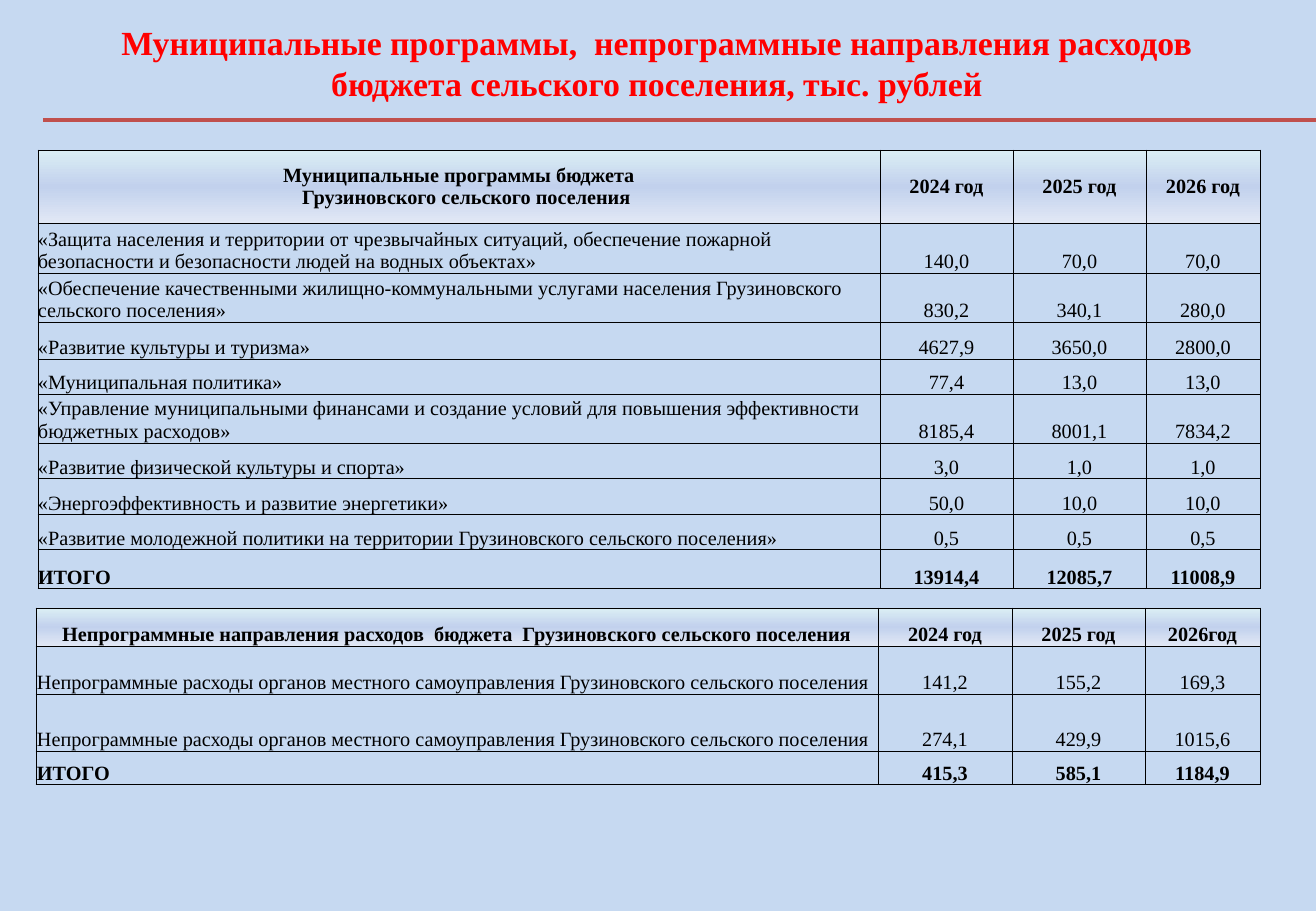
from lxml import etree
from pptx import Presentation
from pptx.dml.color import RGBColor
from pptx.enum.shapes import MSO_CONNECTOR
from pptx.enum.text import MSO_ANCHOR, MSO_AUTO_SIZE, PP_ALIGN
from pptx.oxml.ns import qn
from pptx.util import Pt

TITLE = ("Муниципальные программы,  непрограммные направления расходов "
         "бюджета сельского поселения, тыс. рублей")
ORGANS = ("Непрограммные расходы органов местного самоуправления "
          "Грузиновского сельского поселения")

PROGRAMS = [
    ("Муниципальные программы бюджета\nГрузиновского сельского поселения",
     "2024 год", "2025 год", "2026 год"),
    ("«Защита населения и территории от чрезвычайных ситуаций, обеспечение пожарной "
     "безопасности и безопасности людей на водных объектах»", "140,0", "70,0", "70,0"),
    ("«Обеспечение качественными жилищно-коммунальными услугами населения "
     "Грузиновского сельского поселения»", "830,2", "340,1", "280,0"),
    ("«Развитие культуры и туризма»", "4627,9", "3650,0", "2800,0"),
    ("«Муниципальная политика»", "77,4", "13,0", "13,0"),
    ("«Управление муниципальными финансами и создание условий для повышения "
     "эффективности бюджетных расходов»", "8185,4", "8001,1", "7834,2"),
    ("«Развитие физической культуры и спорта»", "3,0", "1,0", "1,0"),
    ("«Энергоэффективность и развитие энергетики»", "50,0", "10,0", "10,0"),
    ("«Развитие молодежной политики на территории Грузиновского сельского поселения»",
     "0,5", "0,5", "0,5"),
    ("ИТОГО", "13914,4", "12085,7", "11008,9"),
]
OTHER = [
    ("Непрограммные направления расходов  бюджета  Грузиновского сельского поселения",
     "2024 год", "2025 год", "2026год"),
    (ORGANS, "141,2", "155,2", "169,3"),
    (ORGANS, "274,1", "429,9", "1015,6"),
    ("ИТОГО", "415,3", "585,1", "1184,9"),
]

CENTER, LEFT = PP_ALIGN.CENTER, PP_ALIGN.LEFT
TOP, MIDDLE, BOTTOM = MSO_ANCHOR.TOP, MSO_ANCHOR.MIDDLE, MSO_ANCHOR.BOTTOM

# rows, left, top, column widths, row heights, cell inset, header anchor
TABLES = [
    (PROGRAMS, 38, 150, (842, 133, 133, 114),
     (73, 50, 49, 37, 35, 49, 36, 36, 35, 39), 0, MIDDLE),
    (OTHER, 36, 608, (842, 134, 133, 115), (38, 48, 57, 34), 1, BOTTOM),
]

SKY = RGBColor(0xC6, 0xD9, 0xF1)
RED = RGBColor(0xFF, 0x00, 0x00)
BRICK = RGBColor(0xC0, 0x50, 0x4D)
BLACK = RGBColor(0x00, 0x00, 0x00)
HEAD_STOPS = [(0, RGBColor(0xDB, 0xEE, 0xF4)),
              (50, RGBColor(0xC2, 0xD1, 0xED)),
              (100, RGBColor(0xE1, 0xE8, 0xF5))]
FONT = "Times New Roman"
INDENT = 15


def px(n):
    return round(n * 914400 / 121.5)


def add_run(para, text, size, color, bold):
    run = para.add_run()
    run.text = text
    font = run.font
    font.name, font.size, font.bold = FONT, Pt(size), bold
    font.color.rgb = color


def add_color(parent, color):
    etree.SubElement(parent, qn("a:srgbClr"), val=str(color))


def set_borders(cell):
    props = cell._tc.get_or_add_tcPr()
    for side in ("L", "R", "T", "B"):
        line = etree.SubElement(props, qn("a:ln" + side), w=str(Pt(0.5)))
        add_color(etree.SubElement(line, qn("a:solidFill")), BLACK)


def fill_head(cell):
    """Fill a header cell with the vertical three-stop gradient."""
    props = cell._tc.get_or_add_tcPr()
    grad = etree.SubElement(props, qn("a:gradFill"), rotWithShape="1")
    stops = etree.SubElement(grad, qn("a:gsLst"))
    for pos, color in HEAD_STOPS:
        add_color(etree.SubElement(stops, qn("a:gs"), pos=str(pos * 1000)), color)
    etree.SubElement(grad, qn("a:lin"), ang="5400000", scaled="0")


def fill_cell(cell, text, align, anchor, bold, inset):
    cell.margin_left = cell.margin_right = cell.margin_top = px(inset)
    cell.margin_bottom = 0
    cell.vertical_anchor = anchor
    frame = cell.text_frame
    for i, part in enumerate(text.split("\n")):
        para = frame.add_paragraph() if i else frame.paragraphs[0]
        para.alignment = align
        if i:
            para._p.get_or_add_pPr().set("marL", str(px(INDENT)))
        add_run(para, part, 12, BLACK, bold)


def add_grid(slide, rows, left, top, widths, heights, inset, anchor):
    table = slide.shapes.add_table(
        len(rows), len(widths), px(left), px(top),
        px(sum(widths)), px(sum(heights))).table
    table.horz_banding = False
    for col, width in zip(table.columns, widths):
        col.width = px(width)
    for r, (row, height) in enumerate(zip(rows, heights)):
        table.rows[r].height = px(height)
        head = r == 0
        bold = head or r == len(rows) - 1
        for c, text in enumerate(row):
            cell = table.cell(r, c)
            fill_cell(cell, text, CENTER if head or c else LEFT,
                      anchor if head else BOTTOM, bold, inset)
            set_borders(cell)
            if head:
                fill_head(cell)
            else:
                cell.fill.background()


def add_title(slide):
    title = slide.shapes.title
    title.left, title.top, title.width, title.height = map(px, (46, 16, 1222, 94))
    frame = title.text_frame
    frame.word_wrap = True
    frame.auto_size = MSO_AUTO_SIZE.NONE
    frame.vertical_anchor = TOP
    para = frame.paragraphs[0]
    para.alignment = CENTER
    add_run(para, TITLE, 20, RED, True)


def add_rule(slide):
    rule = slide.shapes.add_connector(
        MSO_CONNECTOR.STRAIGHT, px(43), px(120), px(1316), px(120))
    rule.line.color.rgb = BRICK
    rule.line.width = Pt(2.5)
    etree.SubElement(rule._element.spPr, qn("a:effectLst"))


def main():
    deck = Presentation()
    deck.slide_width, deck.slide_height = px(1316), px(911)
    slide = deck.slides.add_slide(deck.slide_layouts[5])
    back = slide.background.fill
    back.solid()
    back.fore_color.rgb = SKY
    add_title(slide)
    add_rule(slide)
    for grid in TABLES:
        add_grid(slide, *grid)
    deck.save("out.pptx")


if __name__ == "__main__":
    main()
